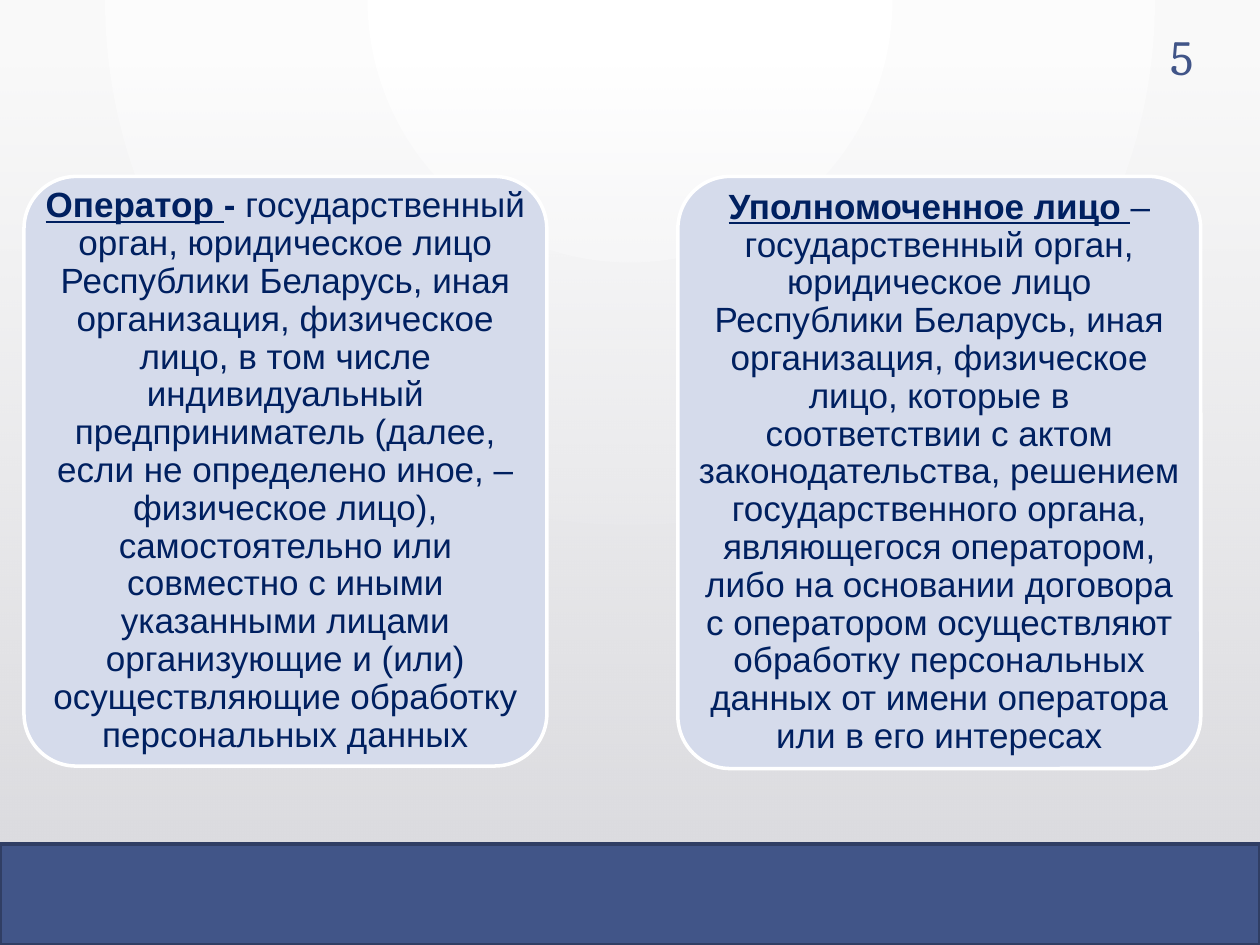
from pptx import Presentation, util as u
from pptx.dml.color import RGBColor
from pptx.enum import shapes, text
from pptx.oxml import parse_xml
from pptx.oxml.ns import nsdecls, qn

OPERATOR = (
    ("Оператор ", {"bold": True, "underline": True}),
    ("- ", {"bold": True}),
    ("государственный орган, юридическое лицо Республики Беларусь, иная "
     "организация, физическое лицо, в том числе индивидуальный предприниматель "
     "(далее, если не определено иное, – физическое лицо), самостоятельно или "
     "совместно с иными указанными лицами организующие и (или) осуществляющие "
     "обработку персональных данных", {}),
)
AUTHORISED_PERSON = (
    ("Уполномоченное лицо ", {"bold": True, "underline": True}),
    ("– государственный орган, юридическое лицо Республики Беларусь, иная "
     "организация, физическое лицо, которые в соответствии с актом "
     "законодательства, решением государственного органа, являющегося "
     "оператором, либо на основании договора с оператором осуществляют "
     "обработку персональных данных от имени оператора или в его интересах", {}),
)


def colour(value):
    return RGBColor.from_string(value)


def apply(target, values):
    for name, value in values.items():
        setattr(target, name, value)


def set_alpha(colour_element, percent):
    colour_element.append(
        parse_xml(f'<a:alpha {nsdecls("a")} val="{percent * 1000}"/>'))


class DefinitionSlide:
    navy, blue, blue_edge, card_fill, white = (
        "002060", "415588", "303E64", "D5DBEB", "FFFFFF")
    definition_font = {"name": "Arial", "size": u.Pt(20)}
    number_font = {"name": "Cambria", "size": u.Pt(28)}

    def __init__(self, presentation):
        self.slide = presentation.slides.add_slide(presentation.slide_layouts[6])

    def gradient(self, fill, *stops):
        fill.gradient()
        for stop, value in zip(fill.gradient_stops, stops):
            stop.color.rgb = colour(value)

    def background(self, centre, edge):
        self.gradient(self.slide.background.fill, centre, edge)
        gradient = self.slide.element.find(".//" + qn("a:gradFill"))
        gradient.replace(gradient.find(qn("a:lin")), parse_xml(
            f'<a:path {nsdecls("a")} path="circle">'
            '<a:fillToRect l="50000" t="0" r="50000" b="100000"/></a:path>'))

    def box(self, kind, left, top, width, height):
        shape = self.slide.shapes.add_shape(
            kind, *map(u.Inches, (left, top, width, height)))
        shape.shadow.inherit = False
        return shape

    def paint(self, shape, fill, line):
        shape.fill.solid()
        shape.fill.fore_color.rgb = colour(fill)
        shape.line.color.rgb = colour(line)
        shape.line.width = u.Pt(2)

    def shade(self, top, height, start, end):
        shade = self.box(shapes.MSO_SHAPE.RECTANGLE, 0, top, 10, height)
        self.gradient(shade.fill, start, end)
        shade.fill.gradient_angle = 270
        set_alpha(shade.element.find(".//" + qn("a:srgbClr")), 0)
        shade.line.fill.background()

    def rule(self, y):
        rule = self.slide.shapes.add_connector(
            shapes.MSO_CONNECTOR.STRAIGHT, *map(u.Inches, (0, y, 10, y)))
        rule.line.color.rgb = colour("000001")
        rule.line.width = u.Pt(1)
        set_alpha(rule.element.find(".//" + qn("a:srgbClr")), 20)
        rule.element.spPr.append(parse_xml(f'<a:effectLst {nsdecls("a")}/>'))

    def band(self, top, height):
        band = self.box(shapes.MSO_SHAPE.RECTANGLE, 0, top, 10, height)
        self.paint(band, self.blue, self.blue_edge)

    def add_runs(self, paragraph, runs, font, value):
        for wording, emphasis in runs:
            run = paragraph.add_run()
            run.text = wording
            apply(run.font, {**font, **emphasis})
            run.font.color.rgb = colour(value)

    def card(self, left, height, definition):
        card = self.box(shapes.MSO_SHAPE.ROUNDED_RECTANGLE, left, 1.4, 4.15, height)
        card.adjustments[0] = 0.1
        self.paint(card, self.card_fill, self.white)
        apply(card.text_frame, {
            "word_wrap": True, "vertical_anchor": text.MSO_ANCHOR.MIDDLE,
            "margin_left": u.Inches(0.04), "margin_right": u.Inches(0.04),
            "margin_top": u.Inches(0.03), "margin_bottom": u.Inches(0.03)})
        paragraph = card.text_frame.paragraphs[0]
        apply(paragraph, {"alignment": text.PP_ALIGN.CENTER, "line_spacing": 0.9})
        self.add_runs(paragraph, definition, self.definition_font, self.navy)

    def page_number(self, number):
        page = self.slide.shapes.add_textbox(
            *map(u.Inches, (9.13, 0.16, 0.44, 0.55)))
        page.text_frame.word_wrap = True
        paragraph = page.text_frame.paragraphs[0]
        paragraph.alignment = text.PP_ALIGN.RIGHT
        self.add_runs(paragraph, [(number, {})], self.number_font, self.blue)


def main():
    presentation = Presentation()
    apply(presentation, {"slide_width": u.Inches(10), "slide_height": u.Inches(7.5)})
    page = DefinitionSlide(presentation)
    page.background("FFFFFF", "F9F9F9")
    page.shade(0.51, 6.17, "DCDCE0", "DEDEE2")
    page.rule(6.69)
    page.band(6.7, 0.8)
    page.card(0.19, 4.68, OPERATOR)
    page.card(5.38, 4.7, AUTHORISED_PERSON)
    page.page_number("5")
    presentation.save("out.pptx")


if __name__ == "__main__":
    main()
